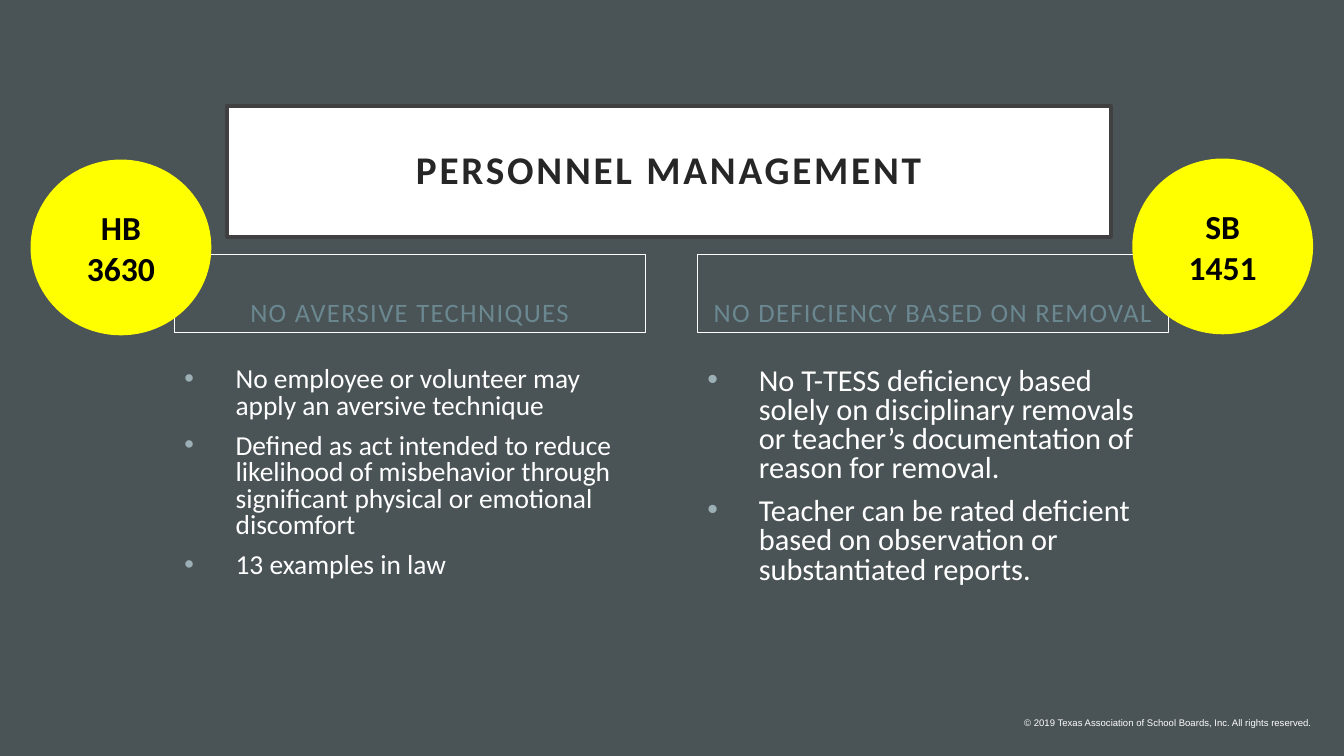
from lxml.etree import SubElement
from pptx import Presentation
from pptx.dml.color import RGBColor
from pptx.enum.shapes import MSO_SHAPE as Shape
from pptx.enum.text import MSO_ANCHOR as Anchor, MSO_AUTO_SIZE as AutoSize, PP_ALIGN as Align
from pptx.oxml.ns import qn
from pptx.util import Emu, Inches, Pt

COLORS = {
    "background": "4A5356", "white": "FFFFFF", "title": "262626", "frame": "404040",
    "heading": "6B8891", "bullet": "9BAFB5", "badge": "FFFF00", "black": "000000",
}
COLUMN_LEFT, COLUMN_STEP, COLUMN_WIDTH = 1.73, 5.19, 4.67
HEADING_TOP, HEADING_HEIGHT = 2.53, 0.77
BODY_TOP, BODY_HEIGHT = 3.6, 2.67
BULLET_INDENT = 0.51

COLUMNS = [
    ("NO AVERSIVE TECHNIQUES", 19.6, [
        "No employee or volunteer may apply an aversive technique",
        "Defined as act intended to reduce likelihood of misbehavior through "
        "significant physical or emotional discomfort",
        "13 examples in law",
    ]),
    ("NO DEFICIENCY BASED ON REMOVAL", 21.7, [
        "No T-TESS deficiency based solely on disciplinary removals or "
        "teacher’s documentation of reason for removal.",
        "Teacher can be rated deficient based on observation or substantiated reports.",
    ]),
]
BADGES = [("SB 1451", 11.24, 1.58), ("HB 3630", 0.31, 1.59)]


def rgb(name):
    return RGBColor.from_string(COLORS[name])


def box(left, top, width, height):
    return [Inches(length) for length in (left, top, width, height)]


def style(paragraph, size, color, align=Align.LEFT, bold=False, face="Calibri", tracking=0):
    """Format a paragraph; tracking is letter spacing in points."""
    paragraph.alignment = align
    font = paragraph.font
    font.name, font.size, font.bold = face, Pt(size), bold
    font.color.rgb = rgb(color)
    if tracking:
        for run in paragraph.runs:
            run._r.get_or_add_rPr().set("spc", str(tracking * 100))


def outline(shape, color, width, fill=None):
    shape.line.color.rgb = rgb(color)
    shape.line.width = Pt(width)
    if fill:
        shape.fill.solid()
        shape.fill.fore_color.rgb = rgb(fill)
    else:
        shape.fill.background()


def add_framed_shape(slide, kind, place, text, anchor):
    shape = slide.shapes.add_shape(kind, *box(*place))
    shape.shadow.inherit = False
    frame = shape.text_frame
    frame.text, frame.word_wrap, frame.vertical_anchor = text, True, anchor
    return shape, frame.paragraphs[0]


def add_title(slide, text):
    title = slide.shapes.title
    title.left, title.top, title.width, title.height = box(2.25, 1.05, 8.77, 1.3)
    outline(title, "frame", 2.5, "white")
    frame = title.text_frame
    frame.text, frame.vertical_anchor, frame.auto_size = text, Anchor.MIDDLE, AutoSize.NONE
    frame.margin_left = frame.margin_right = Inches(0.2)
    frame.margin_top = frame.margin_bottom = Inches(0.2)
    frame.paragraphs[0].line_spacing = 0.9
    style(frame.paragraphs[0], 28, "title", Align.CENTER, bold=True, tracking=2)


def add_heading(slide, left, text):
    place = (left, HEADING_TOP, COLUMN_WIDTH, HEADING_HEIGHT)
    heading, paragraph = add_framed_shape(slide, Shape.RECTANGLE, place, text, Anchor.BOTTOM)
    outline(heading, "white", 0.75)
    style(paragraph, 19, "heading", Align.CENTER, tracking=1)


def add_bullet_mark(paragraph):
    props = paragraph._p.get_or_add_pPr()
    props.set("marL", str(Inches(BULLET_INDENT)))
    props.set("indent", str(-Inches(BULLET_INDENT)))
    SubElement(SubElement(props, qn("a:buClr")), qn("a:srgbClr")).set("val", COLORS["bullet"])
    SubElement(props, qn("a:buFont")).set("typeface", "Arial")
    SubElement(props, qn("a:buChar")).set("char", "•")


def add_bullets(slide, left, items, size):
    place = box(left, BODY_TOP, COLUMN_WIDTH, BODY_HEIGHT)
    frame = slide.shapes.add_textbox(*place).text_frame
    frame.word_wrap = True
    for index, item in enumerate(items):
        paragraph = frame.add_paragraph() if index else frame.paragraphs[0]
        paragraph.text = item
        add_bullet_mark(paragraph)
        paragraph.line_spacing = 0.8
        if index:
            paragraph.space_before = Pt(10)
        style(paragraph, size, "white")


def add_badge(slide, text, left, top):
    place = (left, top, 1.78, 1.73)
    badge, paragraph = add_framed_shape(slide, Shape.OVAL, place, text, Anchor.MIDDLE)
    outline(badge, "badge", 1, "badge")
    style(paragraph, 24, "black", Align.CENTER, bold=True)


def add_copyright(slide, text):
    frame = slide.shapes.add_textbox(*box(8.18, 7.06, 4.93, 0.21)).text_frame
    frame.text, frame.word_wrap = text, True
    style(frame.paragraphs[0], 6.8, "white", Align.RIGHT, face="Arial")


def main():
    deck = Presentation()
    deck.slide_width, deck.slide_height = Emu(12192000), Inches(7.5)
    slide = deck.slides.add_slide(deck.slide_layouts[5])
    slide.background.fill.solid()
    slide.background.fill.fore_color.rgb = rgb("background")

    add_copyright(slide, "© 2019 Texas Association of School Boards, Inc. All rights reserved.")
    add_title(slide, "PERSONNEL MANAGEMENT")
    for index, (heading, size, items) in enumerate(COLUMNS):
        left = COLUMN_LEFT + index * COLUMN_STEP
        add_heading(slide, left, heading)
        add_bullets(slide, left, items, size)
    for badge in BADGES:
        add_badge(slide, *badge)
    deck.save("out.pptx")


if __name__ == "__main__":
    main()
